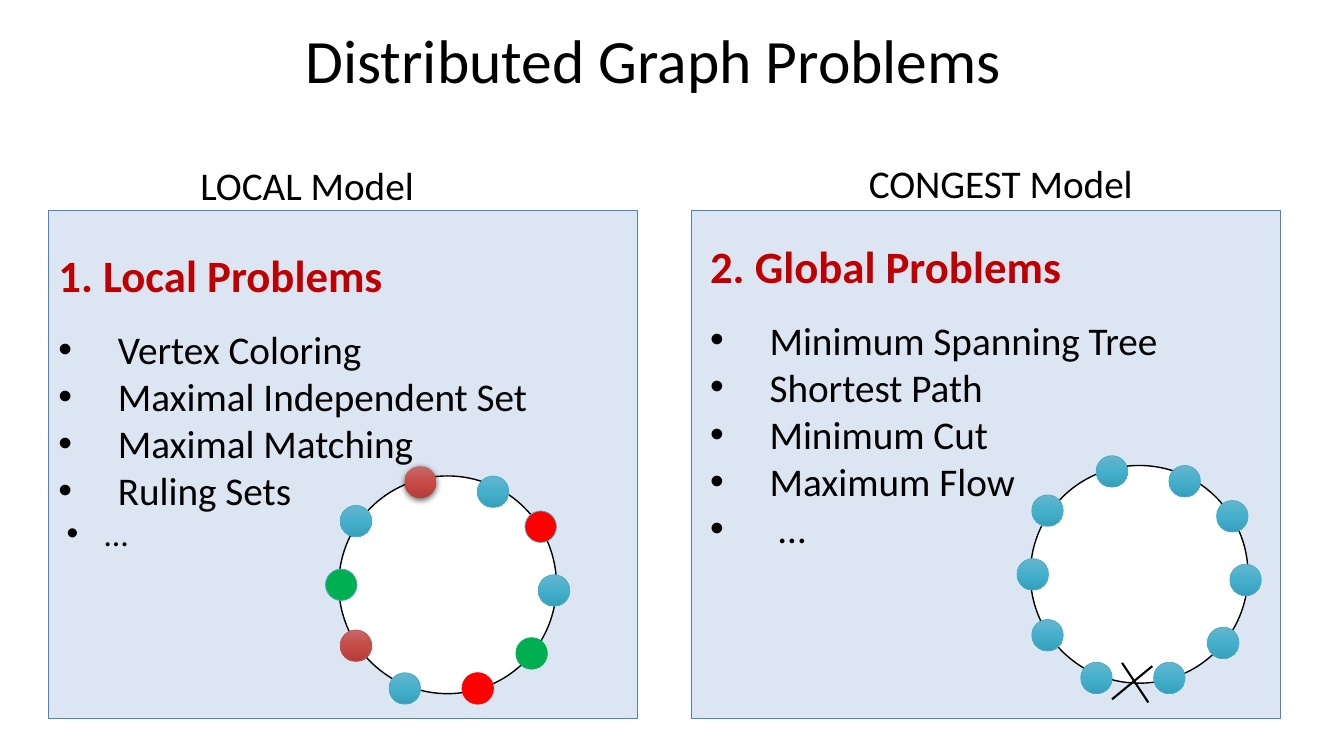
from copy import deepcopy
from dataclasses import dataclass

from lxml import etree
from pptx import Presentation
from pptx.dml.color import RGBColor
from pptx.enum.shapes import MSO_CONNECTOR, MSO_SHAPE
from pptx.enum.text import MSO_ANCHOR, MSO_AUTO_SIZE, PP_ALIGN
from pptx.oxml.ns import qn
from pptx.util import Pt

RECT, OVAL = MSO_SHAPE.RECTANGLE, MSO_SHAPE.OVAL
STRAIGHT = MSO_CONNECTOR.STRAIGHT
TOP, MIDDLE = MSO_ANCHOR.TOP, MSO_ANCHOR.MIDDLE
NO_FIT, GROW = MSO_AUTO_SIZE.NONE, MSO_AUTO_SIZE.SHAPE_TO_FIT_TEXT
LEFT = PP_ALIGN.LEFT


@dataclass(frozen=True)
class Theme:
    font: str = "Calibri"
    title: float = 44
    heading: float = 32
    body: float = 28
    small: float = 24
    black: str = "000000"
    white: str = "FFFFFF"
    accent: str = "C00000"
    panel: str = "DCE6F2"
    panel_line: str = "4F81BD"


T = Theme()

# Fill (one colour, or three from top to bottom) and outline of each node kind
TEAL_LINE = "4BACC6"
TEAL = (("66B5CD", "45B0CC", "36A0BC"), TEAL_LINE)
BROWN_FILL = ("C76967", "C64B47", "B63C39")
BROWN = (BROWN_FILL, "C0504D")
BROWN_RAISED = (BROWN_FILL, None)
RED, RED_TEAL = ("FF0000", "FF0000"), ("FF0000", TEAL_LINE)
GREEN, GREEN_TEAL = ("00B050", "00B050"), ("00B050", TEAL_LINE)

RING, NODE = 155.5, 22.5
# Clockwise from the top right, relative to the ring's box
NODE_OFFSETS = [(99, 0), (133, 25), (142.5, 70.5), (126.5, 115.5), (88, 140.5),
                (36, 140.5), (1, 110), (-9.5, 66.5), (1, 21), (47, -7)]
CROSS = [(65.5, 141, 84.2, 169.2), (58.3, 167, 87.1, 143.3)]
PANEL_SIZE = (420.5, 363)

PANELS = [
    dict(at=(34.5, 150.5), label="LOCAL Model", label_box=(101.5, -39, 168.5, 41),
         heading="1. Local Problems", body_box=(0, 0, 389.5, 317.5),
         items=["Vertex Coloring", "Maximal Independent Set",
                "Maximal Matching", "Ruling Sets"],
         more=(T.small, 33, -27), ring_at=(207.5, 189.5), cut=False,
         nodes=[TEAL, RED_TEAL, TEAL, GREEN, RED, TEAL, BROWN, GREEN_TEAL,
                TEAL, BROWN_RAISED]),
    dict(at=(494, 150), label="CONGEST Model", label_box=(119.5, -40, 205, 41),
         heading="2. Global Problems", body_box=(6, -6, 414.7, 339),
         items=["Minimum Spanning Tree", "Shortest Path",
                "Minimum Cut", "Maximum Flow"],
         more=(T.body, 49, -49), ring_at=(242, 182.5), cut=True,
         nodes=[TEAL] * len(NODE_OFFSETS)),
]


def rgb(color):
    return RGBColor.from_string(color)


def apply(obj, **values):
    for name, value in values.items():
        setattr(obj, name, value)


def move(sp, x, y, w, h):
    apply(sp, left=Pt(x), top=Pt(y), width=Pt(w), height=Pt(h))


def paint(sp, fill, line, weight):
    """Fill with one colour or a three-stop downward gradient, then outline."""
    if isinstance(fill, str):
        sp.fill.solid()
        sp.fill.fore_color.rgb = rgb(fill)
    else:
        sp.fill.gradient()
        sp.fill.gradient_angle = 270
        first = sp.fill.gradient_stops[0]._gs
        first.addnext(deepcopy(first))
        for stop, color, position in zip(sp.fill.gradient_stops, fill, (0, 0.5, 1)):
            stop.color.rgb = rgb(color)
            stop.position = position
    if line is None:
        sp.line.fill.background()
    else:
        sp.line.color.rgb = rgb(line)
        sp.line.width = Pt(weight)


def add_shape(slide, kind, box, fill, line, weight=0.5):
    sp = slide.shapes.add_shape(kind, *map(Pt, box))
    sp.shadow.inherit = False
    paint(sp, fill, line, weight)
    return sp


def add_shadow(sp):
    effects = sp._element.spPr.find(qn("a:effectLst"))
    shadow = etree.SubElement(effects, qn("a:outerShdw"), blurRad=str(Pt(4.5)),
                              dist=str(Pt(1.5)), dir="5400000", rotWithShape="0")
    color = etree.SubElement(shadow, qn("a:srgbClr"), val=T.black)
    etree.SubElement(color, qn("a:alpha"), val="63000")


def write(p, text, size, color=T.black, bold=False, spacing=1.0):
    apply(p, alignment=LEFT, line_spacing=spacing, space_before=Pt(0))
    r = p.add_run()
    r.text = text
    apply(r.font, name=T.font, size=Pt(size), bold=bold)
    r.font.color.rgb = rgb(color)


def indent(p, margin, hanging):
    pPr = p._p.get_or_add_pPr()
    pPr.set("marL", str(Pt(margin)))
    pPr.set("indent", str(Pt(hanging)))
    return pPr


def draw_title(sp, box):
    move(sp, *box)
    tf = sp.text_frame
    apply(tf, vertical_anchor=MIDDLE, auto_size=NO_FIT, word_wrap=True)
    write(tf.paragraphs[0], "Distributed Graph Problems", T.title, spacing=0.9)


def draw_list(sp, box, heading, items, more):
    move(sp, *box)
    tf = sp.text_frame
    apply(tf, vertical_anchor=TOP, auto_size=NO_FIT, word_wrap=True,
          margin_left=Pt(7.2), margin_right=Pt(7.2), margin_top=Pt(7.2),
          margin_bottom=0)
    p = tf.paragraphs[0]
    etree.SubElement(indent(p, 0, 0), qn("a:buNone"))
    write(p, heading, T.heading, T.accent, True, 1.5)
    rows = [(text, T.body, 42.5, -42.5) for text in items] + [("…", *more)]
    for i, (text, size, margin, hanging) in enumerate(rows):
        p = tf.add_paragraph()
        etree.SubElement(indent(p, margin, hanging), qn("a:buChar"), char="•")
        write(p, text, size, spacing=1.0 if i else 1.5)


def draw_label(slide, box, text):
    tf = slide.shapes.add_textbox(*map(Pt, box)).text_frame
    apply(tf, word_wrap=False, auto_size=GROW)
    write(tf.paragraphs[0], text, T.body)


def draw_ring(slide, x, y, nodes, cut):
    """Ring of nodes, with a cross over its bottom edge if it is cut."""
    add_shape(slide, OVAL, (x, y, RING, RING), T.white, T.black, 1)
    for (dx, dy), kind in zip(NODE_OFFSETS, nodes):
        sp = add_shape(slide, OVAL, (x + dx, y + dy, NODE, NODE), *kind)
        if kind is BROWN_RAISED:
            add_shadow(sp)
    for x1, y1, x2, y2 in CROSS if cut else []:
        ends = (x + x1, y + y1, x + x2, y + y2)
        line = slide.shapes.add_connector(STRAIGHT, *map(Pt, ends))
        line.line.color.rgb = rgb(T.black)
        line.line.width = Pt(1.5)
        etree.SubElement(line._element.spPr, qn("a:effectLst"))


def draw_panel(slide, body, panel):
    x, y = panel["at"]

    def place(dx, dy, *size):
        return (x + dx, y + dy, *size)

    back = add_shape(slide, RECT, (x, y, *PANEL_SIZE), T.panel, T.panel_line)
    slide.shapes._spTree.insert(2, back._element)  # behind the list
    draw_list(body, place(*panel["body_box"]), panel["heading"],
              panel["items"], panel["more"])
    draw_ring(slide, *place(*panel["ring_at"]), panel["nodes"], panel["cut"])
    draw_label(slide, place(*panel["label_box"]), panel["label"])


def main():
    prs = Presentation()
    apply(prs, slide_width=Pt(960), slide_height=Pt(540))
    slide = prs.slides.add_slide(prs.slide_layouts[3])
    title, *bodies = slide.placeholders
    draw_title(title, (211, -6.5, 828, 104.4))
    for body, panel in zip(bodies, PANELS):
        draw_panel(slide, body, panel)
    prs.save("out.pptx")


if __name__ == "__main__":
    main()
